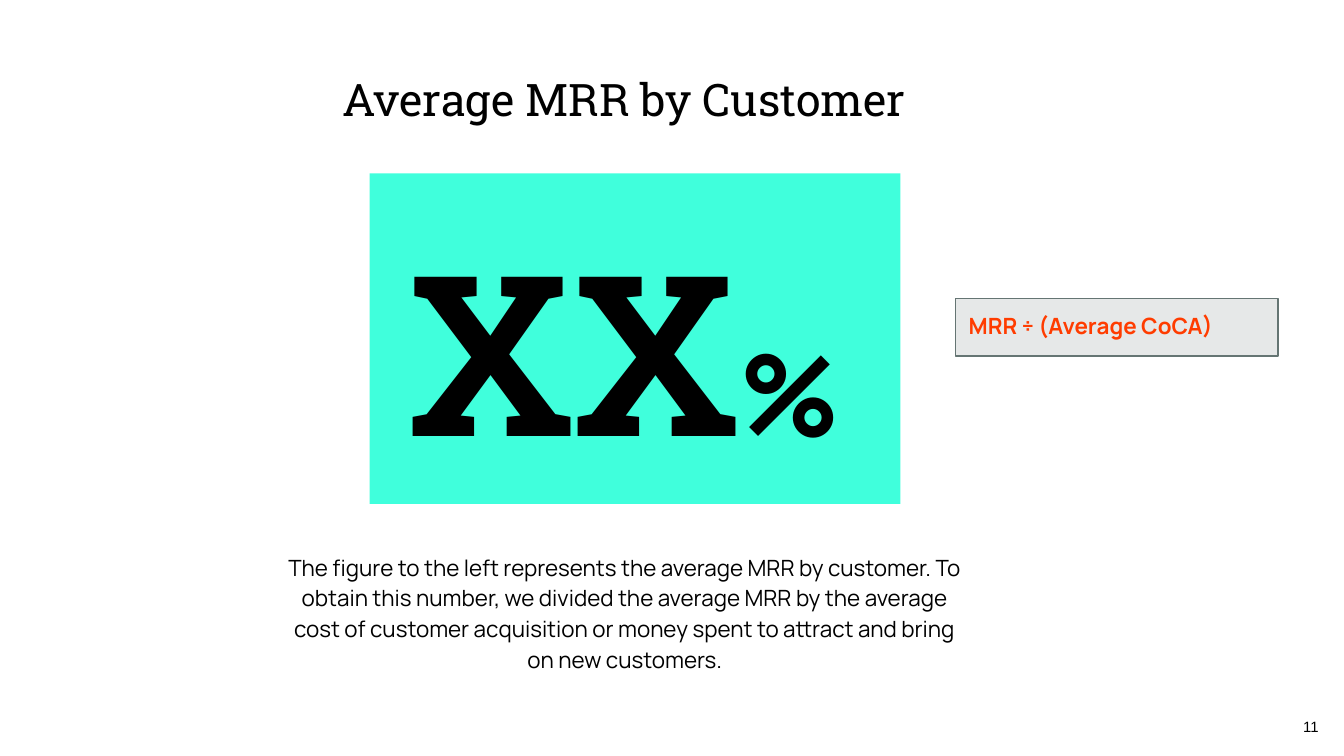
"""Build the Average MRR by Customer slide."""
from dataclasses import dataclass, field

import lxml.etree
import pptx
import pptx.dml.color
import pptx.enum.shapes
import pptx.enum.text
import pptx.oxml.ns
import pptx.util

Inches = pptx.util.Inches
Pt = pptx.util.Pt
Align = pptx.enum.text.PP_ALIGN
Anchor = pptx.enum.text.MSO_ANCHOR

COLORS = {"text": "000000", "panel": "40FFDC", "formula": "FF3C00", "frame": "657573"}


@dataclass(frozen=True)
class Span:
    text: str
    size: float
    font: str = "Manrope"
    bold: bool = False
    color: str = "text"


@dataclass(frozen=True)
class Block:
    area: tuple[float, float, float, float]
    spans: tuple[Span, ...]
    align: Align = Align.CENTER
    anchor: Anchor = Anchor.TOP
    spacing: dict = field(default_factory=dict)


TITLE = Block((2.03, 0.43, 5.23, 0.78), (Span("Average MRR by Customer", 24, "Roboto Slab"),))
FIGURE = Block(
    (2.84, 1.48, 3.62, 2.12),
    (Span("XX", 120, "Roboto Slab", True), Span("%", 60, bold=True)),
)
FORMULA = Block(
    (7.11, 2.22, 2.4, 0.43),
    (Span("MRR ÷ (Average CoCA)", 12, bold=True, color="formula"),),
    Align.LEFT,
)
EXPLANATION = Block(
    (2.02, 3.99, 5.26, 1.16),
    (Span(
        "The figure to the left represents the average MRR by customer. "
        "To obtain this number, we divided the average MRR by the average "
        "cost of customer acquisition or money spent to attract and bring "
        "on new customers.", 12),),
    spacing={"line_spacing": 1.15, "space_after": Pt(16)},
)
PAGE_NUMBER = Block((9.31, 5.19, 0.6, 0.43), (Span("11", 8, "Arial"),), Align.RIGHT, Anchor.MIDDLE)
PANEL_AREA = (2.75, 1.29, 3.95, 2.46)


def rgb(name: str) -> pptx.dml.color.RGBColor:
    """Return a named colour."""
    return pptx.dml.color.RGBColor.from_string(COLORS[name])


def set_attributes(target: object, values: dict) -> None:
    """Set each named attribute of the target."""
    for name, value in values.items():
        setattr(target, name, value)


def write_block(shape: pptx.shapes.base.BaseShape, block: Block) -> None:
    """Place a shape and fill it with the formatted text of a block."""
    sides = ("left", "top", "width", "height")
    set_attributes(shape, dict(zip(sides, map(Inches, block.area))))
    frame = shape.text_frame
    margins = ("margin_left", "margin_top", "margin_right", "margin_bottom")
    set_attributes(frame, dict.fromkeys(margins, Inches(0.1)))
    set_attributes(frame, {
        "word_wrap": True,
        "auto_size": pptx.enum.text.MSO_AUTO_SIZE.NONE,
        "vertical_anchor": block.anchor,
    })
    para = frame.paragraphs[0]
    set_attributes(para, {"alignment": block.align, "space_before": Pt(0), **block.spacing})
    for span in block.spans:
        run = para.add_run()
        run.text = span.text
        set_attributes(run.font, {"size": Pt(span.size), "name": span.font, "bold": span.bold})
        run.font.color.rgb = rgb(span.color)


def add_text(page: pptx.slide.Slide, block: Block) -> None:
    """Add a text box for a block."""
    write_block(page.shapes.add_textbox(*map(Inches, block.area)), block)


def add_rectangle(
    page: pptx.slide.Slide, area: tuple[float, float, float, float], color: str
) -> pptx.shapes.autoshape.Shape:
    """Add a plain filled rectangle."""
    box = page.shapes.add_shape(
        pptx.enum.shapes.MSO_SHAPE.RECTANGLE, *map(Inches, area)
    )
    box.shadow.inherit = False
    box.fill.solid()
    box.fill.fore_color.rgb = rgb(color)
    box.line.fill.background()
    return box


def add_formula(page: pptx.slide.Slide, block: Block) -> None:
    """Add the outlined, translucent formula box."""
    box = add_rectangle(page, block.area, "frame")
    tint = box.element.spPr.find("/".join(map(pptx.oxml.ns.qn, ("a:solidFill", "a:srgbClr"))))
    lxml.etree.SubElement(tint, pptx.oxml.ns.qn("a:alpha"), val="16000")
    box.line.color.rgb = rgb("frame")
    box.line.width = Pt(0.75)
    write_block(box, block)


def main() -> None:
    """Build and save the deck."""
    deck = pptx.Presentation()
    width = Inches(10)
    set_attributes(deck, {"slide_width": width, "slide_height": width * 9 // 16})
    page = deck.slides.add_slide(deck.slide_layouts[5])
    add_text(page, EXPLANATION)
    write_block(page.shapes.title, TITLE)
    add_text(page, PAGE_NUMBER)
    add_rectangle(page, PANEL_AREA, "panel")
    add_text(page, FIGURE)
    add_formula(page, FORMULA)
    deck.save("out.pptx")


if __name__ == "__main__":
    main()
